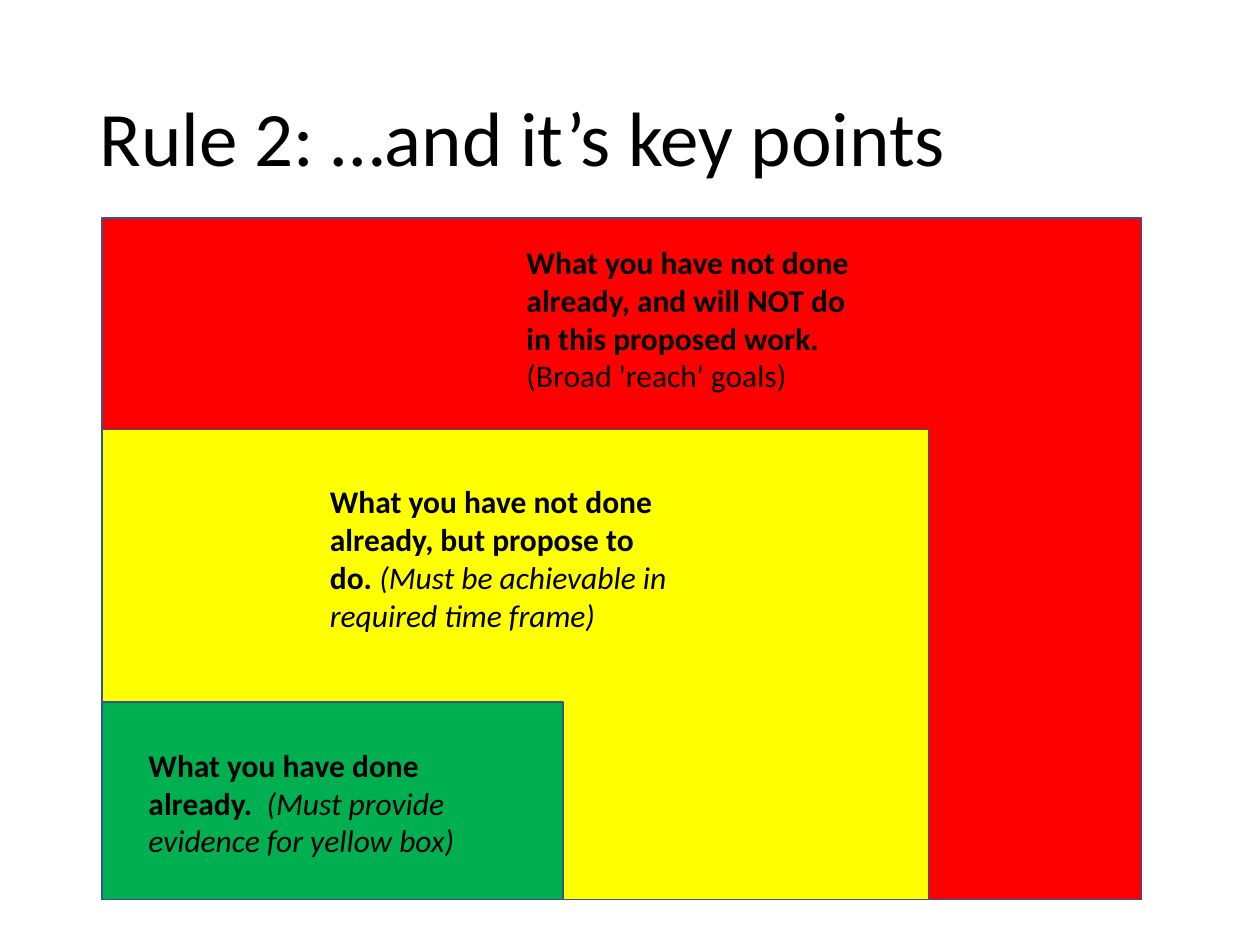
from dataclasses import dataclass

import pptx
import pptx.dml.color
import pptx.enum.shapes
import pptx.enum.text
import pptx.util

RGBColor = pptx.dml.color.RGBColor
Inches = pptx.util.Inches
Pt = pptx.util.Pt

RED = RGBColor(0xFF, 0x00, 0x00)
YELLOW = RGBColor(0xFF, 0xFF, 0x00)
GREEN = RGBColor(0x00, 0xB0, 0x50)
OUTLINE = RGBColor(0x32, 0x54, 0x91)
BLACK = RGBColor(0x00, 0x00, 0x00)

FONT = "Calibri"
SLIDE_WIDTH, SLIDE_HEIGHT = 10, 7.5
# All boxes are nested in the same lower left corner.
CORNER_LEFT, CORNER_BOTTOM = 0.81, 7.14
LABEL_WIDTH = 2.88


@dataclass(frozen=True)
class Box:
    width: float
    height: float
    color: RGBColor
    label_left: float
    label_top: float
    label_height: float
    statement: str
    remark: str
    remark_italic: bool = True


BOXES = [
    Box(8.25, 5.41, RED, 4.08, 1.88, 1.31,
        "What you have not done already, and will NOT do in this proposed work. ",
        "(Broad 'reach' goals)", remark_italic=False),
    Box(6.56, 3.73, YELLOW, 2.52, 3.78, 1.31,
        "What you have not done already, but propose to do. ",
        "(Must be achievable in required time frame)"),
    Box(3.66, 1.57, GREEN, 1.08, 5.87, 1.01,
        "What you have done already.  ",
        "(Must provide evidence for yellow box)"),
]


def add_text_box(slide: pptx.slide.Slide, left: float, top: float,
                 width: float, height: float, size: float):
    """Add a wrapping text box and return its text frame, font set."""
    shape = slide.shapes.add_textbox(
        Inches(left), Inches(top), Inches(width), Inches(height))
    frame = shape.text_frame
    frame.word_wrap = True
    font = frame.paragraphs[0].font
    font.name = FONT
    font.size = Pt(size)
    font.color.rgb = BLACK
    return frame


def add_title(slide: pptx.slide.Slide, text: str) -> None:
    frame = add_text_box(slide, 0.69, 0.4, 8.62, 1.45, 44)
    frame.vertical_anchor = pptx.enum.text.MSO_ANCHOR.MIDDLE
    paragraph = frame.paragraphs[0]
    paragraph.line_spacing = 0.9
    paragraph.add_run().text = text


def add_box(slide: pptx.slide.Slide, box: Box) -> None:
    shape = slide.shapes.add_shape(
        pptx.enum.shapes.MSO_SHAPE.RECTANGLE,
        Inches(CORNER_LEFT), Inches(CORNER_BOTTOM - box.height),
        Inches(box.width), Inches(box.height))
    shape.shadow.inherit = False
    shape.fill.solid()
    shape.fill.fore_color.rgb = box.color
    shape.line.color.rgb = OUTLINE
    shape.line.width = Pt(1)


def add_label(slide: pptx.slide.Slide, box: Box) -> None:
    frame = add_text_box(slide, box.label_left, box.label_top,
                         LABEL_WIDTH, box.label_height, 18)
    frame.auto_size = pptx.enum.text.MSO_AUTO_SIZE.SHAPE_TO_FIT_TEXT
    paragraph = frame.paragraphs[0]
    statement = paragraph.add_run()
    statement.text = box.statement
    statement.font.bold = True
    remark = paragraph.add_run()
    remark.text = box.remark
    remark.font.italic = box.remark_italic


def main() -> None:
    presentation = pptx.Presentation()
    presentation.slide_width = Inches(SLIDE_WIDTH)
    presentation.slide_height = Inches(SLIDE_HEIGHT)
    slide = presentation.slides.add_slide(presentation.slide_layouts[6])
    add_title(slide, "Rule 2: …and it’s key points")
    for box in BOXES:
        add_box(slide, box)
    for box in reversed(BOXES):
        add_label(slide, box)
    presentation.save("out.pptx")


if __name__ == "__main__":
    main()
